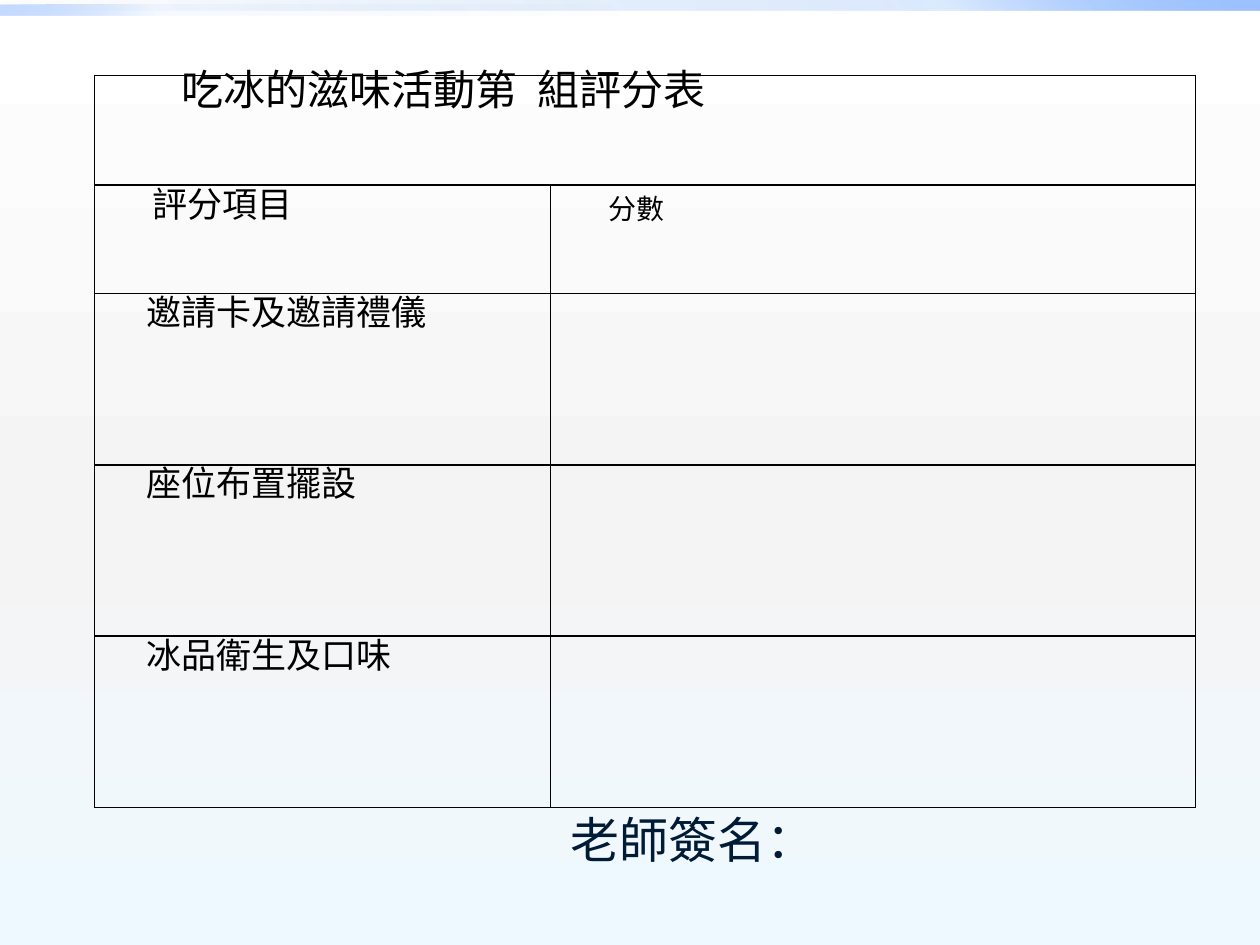
from dataclasses import dataclass

from lxml import etree
from pptx import Presentation
from pptx.dml.color import RGBColor
from pptx.enum.shapes import MSO_SHAPE
from pptx.enum.text import MSO_ANCHOR, PP_ALIGN
from pptx.oxml.ns import qn
from pptx.util import Inches, Pt

RECT = MSO_SHAPE.RECTANGLE
MIDDLE = MSO_ANCHOR.MIDDLE
CENTER, JUSTIFY = PP_ALIGN.CENTER, PP_ALIGN.JUSTIFY
WIDE, HIGH = 10, 7.5
INK, NAVY = "000000", "001B36"
BODY, HEAD = "Times New Roman", "Roboto"


@dataclass
class Stop:
    at: int
    color: str
    alpha: int = 100


@dataclass
class Bar:
    top: float  # in bar heights
    width: float  # share of the slide
    angle: int
    stops: list[Stop]


@dataclass
class Label:
    row: int
    col: int
    text: str
    size: int
    indent: float


BACK = [Stop(0, "FFFFFF"), Stop(55, "F4F4F4"), Stop(100, "EEF9FF")]
BARS = [
    Bar(0, 1, 315, [Stop(0, "0058B7", 0), Stop(75, "4F95FF", 20), Stop(100, "9EC2FF")]),
    Bar(0.5, 0.5, 135, [Stop(0, "0058B7", 0), Stop(75, "4F95FF", 5), Stop(100, "9EC2FF", 60)]),
]
COLS = [3.62, 5.12]
ROWS = [0.87, 0.86] + [1.36] * 3
TAB = 3.85  # start of the words after the blank for the group number
LABELS = [
    Label(0, 0, "吃冰的滋味活動第\t組評分表", 24, 0.67),
    Label(1, 0, "評分項目", 20, 0.44),
    Label(1, 1, "分數", 16, 0.44),
    Label(2, 0, "邀請卡及邀請禮儀", 20, 0.39),
    Label(3, 0, "座位布置擺設", 20, 0.39),
    Label(4, 0, "冰品衛生及口味", 20, 0.39),
]


def paint(text: str) -> RGBColor:
    return RGBColor.from_string(text)


def assign(item, values: dict) -> None:
    for name, value in values.items():
        setattr(item, name, value)


def node(parent, tag: str, **attrs):
    return etree.SubElement(parent, qn(tag), {k: str(v) for k, v in attrs.items()})


def blend(fill, stops: list[Stop], angle: int) -> None:
    """Give a fill a linear gradient, its angle running clockwise."""
    fill.gradient()
    # The stop list belongs to the gradient element that holds each stop
    grad = fill.gradient_stops[0]._gs.getparent().getparent()
    for child in list(grad):
        grad.remove(child)
    chain = node(grad, "a:gsLst")
    for stop in stops:
        mark = node(chain, "a:gs", pos=stop.at * 1000)
        tint = node(mark, "a:srgbClr", val=stop.color)
        if stop.alpha < 100:
            node(tint, "a:alpha", val=stop.alpha * 1000)
    node(grad, "a:lin", ang=angle * 60000, scaled=0)


def draw_bar(slide, bar: Bar, high: float = 0.08) -> None:
    shape = slide.shapes.add_shape(
        RECT, 0, Inches(bar.top * high), Inches(bar.width * WIDE), Inches(high))
    shape.shadow.inherit = False
    shape.line.fill.background()
    blend(shape.fill, bar.stops, bar.angle)


def draw_title(slide, text: str) -> None:
    title = slide.shapes.title
    assign(title, {"left": Inches(1), "top": Inches(6.03),
                   "width": Inches(9), "height": Inches(1.25)})
    title.text_frame.text = text
    title.text_frame.vertical_anchor = MIDDLE
    para = title.text_frame.paragraphs[0]
    para.alignment = CENTER
    assign(para.runs[0].font, {"size": Pt(28), "name": HEAD})
    para.runs[0].font.color.rgb = paint(NAVY)


def frame_cell(cell) -> None:
    assign(cell, {"margin_left": Inches(0.02), "margin_right": Inches(0.02),
                  "margin_top": 0, "margin_bottom": 0})
    props = cell._tc.get_or_add_tcPr()
    for side in ("a:lnL", "a:lnR", "a:lnT", "a:lnB"):
        line = node(props, side, w=Pt(1))
        node(node(line, "a:solidFill"), "a:srgbClr", val=INK)
    cell.fill.background()


def write_cell(cell, label: Label) -> None:
    para = cell.text_frame.paragraphs[0]
    run = para.add_run()
    run.text = label.text
    assign(para, {"alignment": JUSTIFY, "line_spacing": Pt(24)})
    props = para._p.get_or_add_pPr()
    props.set("marL", "0")
    props.set("indent", str(Inches(label.indent)))
    if "\t" in label.text:
        node(node(props, "a:tabLst"), "a:tab", pos=Inches(TAB), algn="l")
    assign(run.font, {"size": Pt(label.size), "name": BODY})
    run.font.color.rgb = paint(INK)


def draw_table(slide) -> None:
    table = slide.shapes.add_table(
        len(ROWS), len(COLS), Inches(0.75), Inches(0.6),
        Inches(sum(COLS)), Inches(sum(ROWS))).table
    assign(table, {"first_row": False, "horz_banding": False})
    for col, width in zip(table.columns, COLS):
        col.width = Inches(width)
    for row, height in zip(table.rows, ROWS):
        row.height = Inches(height)
    for cell in table.iter_cells():
        frame_cell(cell)
    table.cell(0, 0).merge(table.cell(0, 1))
    for label in LABELS:
        write_cell(table.cell(label.row, label.col), label)


def main() -> None:
    deck = Presentation()
    assign(deck, {"slide_width": Inches(WIDE), "slide_height": Inches(HIGH)})
    slide = deck.slides.add_slide(deck.slide_layouts[5])
    # Backdrop and top bars
    blend(slide.background.fill, BACK, 90)
    for bar in BARS:
        draw_bar(slide, bar)
    # Signature line and score sheet
    draw_title(slide, "老師簽名：")
    draw_table(slide)
    deck.save("out.pptx")


if __name__ == "__main__":
    main()
